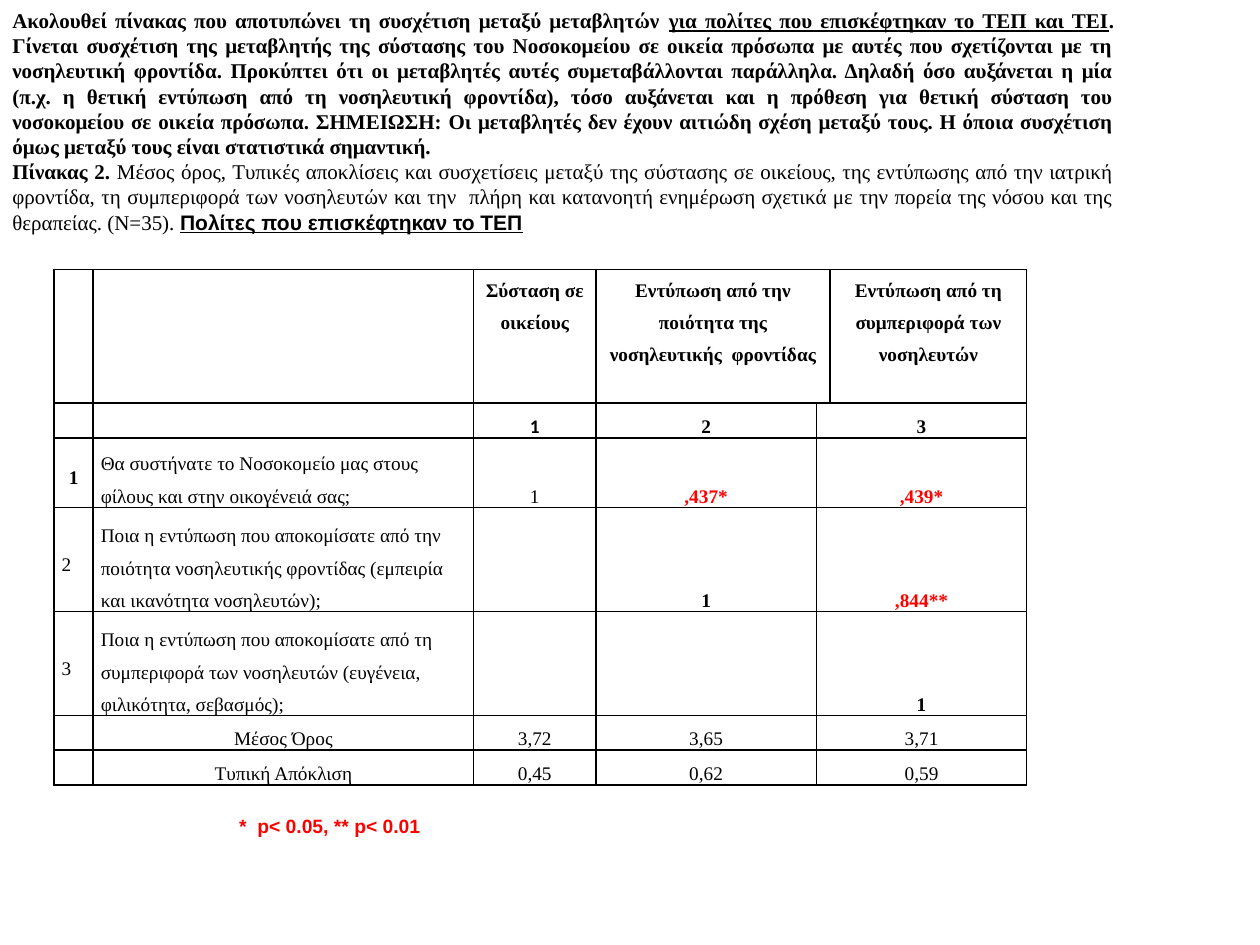
from lxml import etree
from pptx import Presentation
from pptx.dml.color import RGBColor
from pptx.enum import text
from pptx.oxml.ns import qn
from pptx.util import Inches, Pt

SERIF, SANS = "Times New Roman", "Arial"
BLACK, RED = "000000", "FF0000"
LEFT, CENTER, JUSTIFY = text.PP_ALIGN.LEFT, text.PP_ALIGN.CENTER, text.PP_ALIGN.JUSTIFY
TOP, MIDDLE, BOTTOM = text.MSO_ANCHOR.TOP, text.MSO_ANCHOR.MIDDLE, text.MSO_ANCHOR.BOTTOM

# Each span: wording, font, bold, underline
INTRO = [
    [("Ακολουθεί πίνακας που αποτυπώνει τη συσχέτιση μεταξύ μεταβλητών ", SERIF, True, False),
     ("για πολίτες που επισκέφτηκαν το ΤΕΠ και ΤΕΙ", SERIF, True, True),
     (". Γίνεται συσχέτιση της μεταβλητής της σύστασης του Νοσοκομείου σε οικεία πρόσωπα με αυτές "
      "που σχετίζονται με τη νοσηλευτική φροντίδα. Προκύπτει ότι οι μεταβλητές αυτές "
      "συμεταβάλλονται παράλληλα. Δηλαδή όσο αυξάνεται η μία (π.χ. η θετική εντύπωση από τη "
      "νοσηλευτική φροντίδα), τόσο αυξάνεται και η πρόθεση για θετική σύσταση του νοσοκομείου σε "
      "οικεία πρόσωπα. ΣΗΜΕΙΩΣΗ: Οι μεταβλητές δεν έχουν αιτιώδη σχέση μεταξύ τους. Η όποια "
      "συσχέτιση όμως μεταξύ τους είναι στατιστικά σημαντική.", SERIF, True, False)],
    [("Πίνακας 2. ", SERIF, True, False),
     ("Μέσος όρος, Τυπικές αποκλίσεις και συσχετίσεις μεταξύ της σύστασης σε οικείους, της "
      "εντύπωσης από την ιατρική φροντίδα, τη συμπεριφορά των νοσηλευτών και την  πλήρη και "
      "κατανοητή ενημέρωση σχετικά με την πορεία της νόσου και της θεραπείας. (N=35). ",
      SERIF, False, False),
     ("Πολίτες που επισκέφτηκαν το ΤΕΠ", SANS, True, True)],
]
# Number, question, then the three variables
ROWS = [
    ("", "", "Σύσταση σε οικείους", "Εντύπωση από την ποιότητα της νοσηλευτικής  φροντίδας",
     "Εντύπωση από τη συμπεριφορά των νοσηλευτών"),
    ("", "", "1", "2", "3"),
    ("1", "Θα συστήνατε το Νοσοκομείο μας στους φίλους και στην οικογένειά σας;",
     "1", ",437*", ",439*"),
    ("2", "Ποια η εντύπωση που αποκομίσατε από την ποιότητα νοσηλευτικής φροντίδας "
     "(εμπειρία και ικανότητα νοσηλευτών);", "", "1", ",844**"),
    ("3", "Ποια η εντύπωση που αποκομίσατε από τη συμπεριφορά των νοσηλευτών "
     "(ευγένεια, φιλικότητα, σεβασμός);", "", "", "1"),
    ("", "Μέσος Όρος", "3,72", "3,65", "3,71"),
    ("", "Τυπική Απόκλιση", "0,45", "0,62", "0,59"),
]
COLUMN_WIDTHS = [0.31, 3.02, 0.97, 1.75, 0.11, 1.56]
ROW_HEIGHTS = [1.06, 0.26, 0.52, 0.78, 0.78, 0.26, 0.26]
HEADER, CODES, QUESTIONS = 0, 1, (2, 3, 4)
BOLD_CELLS = {(2, 0), (2, 3), (2, 4), (3, 3), (3, 4), (4, 4)}


def style(font, size, name, color, bold):
    font.size, font.name, font.bold = Pt(size), name, bold
    font.color.rgb = RGBColor.from_string(color)


def add_text_box(page, left, top, width, height, wrap):
    box = page.shapes.add_textbox(Inches(left), Inches(top), Inches(width), Inches(height))
    box.text_frame.word_wrap = wrap
    return box.text_frame


def outline(cell):
    properties = cell._tc.get_or_add_tcPr()
    for side in ("lnL", "lnR", "lnT", "lnB"):
        line = etree.SubElement(properties, qn("a:" + side), w=str(Pt(1)))
        fill = etree.SubElement(line, qn("a:solidFill"))
        etree.SubElement(fill, qn("a:srgbClr"), val=BLACK)
    cell.fill.background()
    cell.margin_left = cell.margin_right = Inches(0.06)
    cell.margin_top = cell.margin_bottom = 0


def fill_cell(cell, wording, row, column):
    para = cell.text_frame.paragraphs[0]
    if not wording:
        # Keeps an empty row from growing to the default text size
        etree.SubElement(para._p, qn("a:endParaRPr"), sz="1100")
        return
    para.text = wording
    left_aligned = row in QUESTIONS and (column == 1 or column == 0 and row > 2)
    para.alignment = LEFT if left_aligned else CENTER
    para.line_spacing = 1.5
    cell.vertical_anchor = TOP if row == HEADER else MIDDLE if column == 0 else BOTTOM
    style(para.font, 11, "Calibri" if (row, column) == (CODES, 2) else SERIF,
          RED if "*" in wording else BLACK,
          row in (HEADER, CODES) or (row, column) in BOLD_CELLS)


deck = Presentation()
deck.slide_width, deck.slide_height = Inches(10), Inches(7.5)
page = deck.slides.add_slide(deck.slide_layouts[6])

intro = add_text_box(page, 0, 0, 8.94, 1.92, True)
intro.vertical_anchor = MIDDLE
for number, spans in enumerate(INTRO):
    para = intro.add_paragraph() if number else intro.paragraphs[0]
    para.alignment = JUSTIFY
    for wording, name, bold, underline in spans:
        span = para.add_run()
        span.text = wording
        style(span.font, 12, name, BLACK, bold)
        span.font.underline = underline

table = page.shapes.add_table(
    len(ROWS), len(COLUMN_WIDTHS), Inches(0.43), Inches(2.14),
    Inches(sum(COLUMN_WIDTHS)), Inches(sum(ROW_HEIGHTS))).table
table.first_row = table.horz_banding = False
for column, width in zip(table.columns, COLUMN_WIDTHS):
    column.width = Inches(width)
for row, height in zip(table.rows, ROW_HEIGHTS):
    row.height = Inches(height)
for cell in table.iter_cells():
    outline(cell)
for row, values in enumerate(ROWS):
    # The narrow fifth column belongs to its left neighbour in the header only
    first = 3 if row == HEADER else 4
    table.cell(row, first).merge(table.cell(row, first + 1))
    for column, wording in enumerate(values):
        place = 5 if row == HEADER and column == 4 else column
        fill_cell(table.cell(row, place), wording, row, column)

note = add_text_box(page, 1.8, 6.41, 1.64, 0.29, False).paragraphs[0]
note.text = "*  p< 0.05, ** p< 0.01"
style(note.font, 11, SANS, RED, True)

deck.save("out.pptx")
